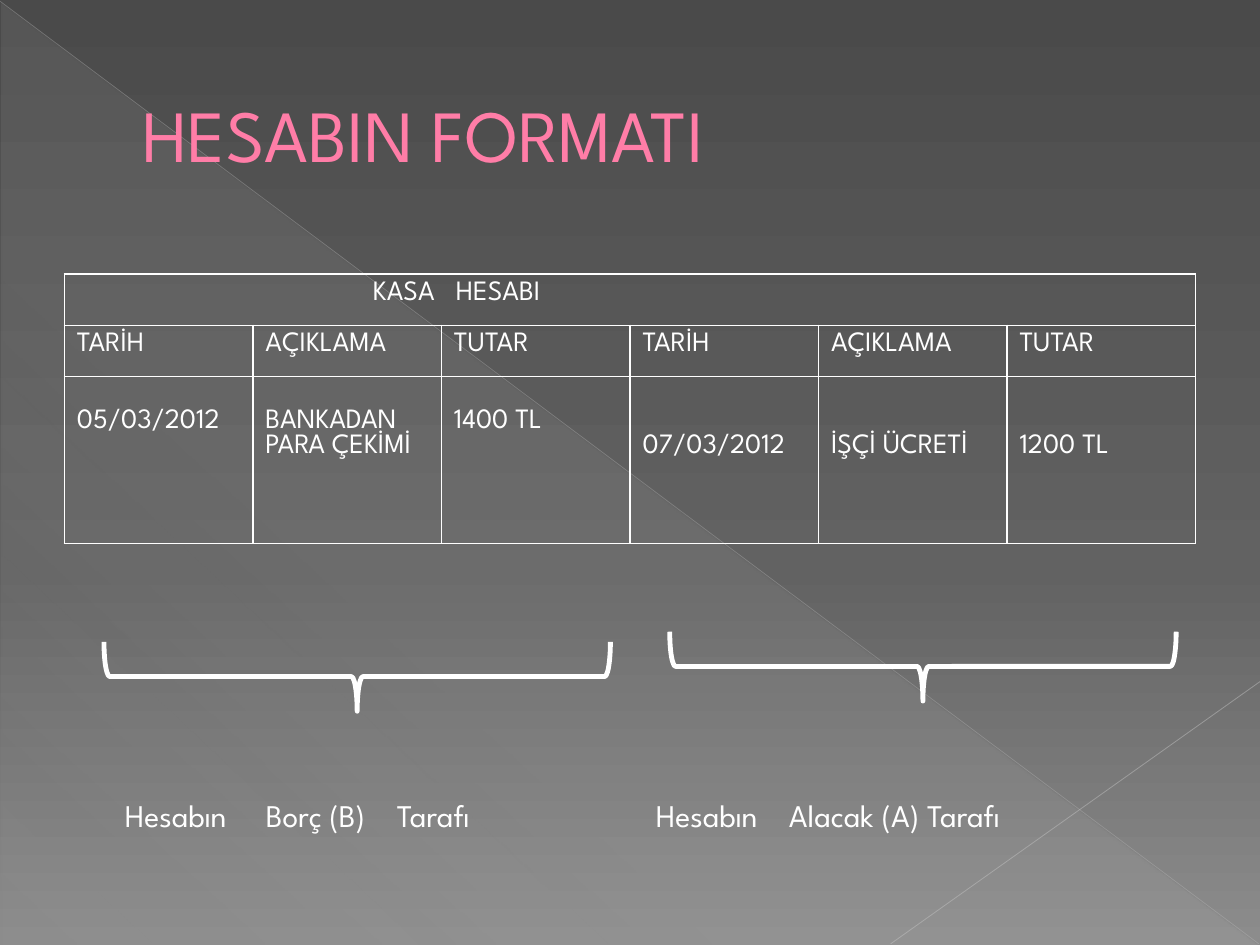
import pptx
import pptx.util
import pptx.dml.color
import pptx.enum.shapes
import pptx.enum.text
import pptx.oxml
import pptx.oxml.ns
from lxml import etree

Pt = pptx.util.Pt
qn = pptx.oxml.ns.qn
MSO = pptx.enum.shapes.MSO_SHAPE
FONT = "League Spartan"
COLORS = {"top": "4A4A4A", "mid": "626262", "bottom": "8C8C8C", "sheen": "D2D2D2",
          "diagonal": "BFBFBF", "corner": "C6C6C6", "title": "FF7DA7", "ink": "FFFFFF"}
HEADERS = ["TARİH", "AÇIKLAMA", "TUTAR"]
DEBIT = ["05/03/2012", "BANKADAN PARA ÇEKİMİ", "1400 TL"]
CREDIT = ["07/03/2012", "İŞÇİ ÜCRETİ", "1200 TL"]


def rgb(name):
    """Return the named colour."""
    return pptx.dml.color.RGBColor.from_string(COLORS[name])


def set_gradient(root, stops, angle):
    """Set (position, colour, opacity) stops and the angle of the gradient in root."""
    grad = root.find(".//" + qn("a:gradFill"))
    gs_list = grad.find(qn("a:gsLst"))
    for gs in list(gs_list):
        gs_list.remove(gs)
    for pos, name, opacity in stops:
        gs = etree.SubElement(gs_list, qn("a:gs"), pos=str(pos * 1000))
        clr = etree.SubElement(gs, qn("a:srgbClr"), val=COLORS[name])
        etree.SubElement(clr, qn("a:alpha"), val=str(opacity * 1000))
    grad.find(qn("a:lin")).set("ang", str(angle * 60000))


def set_text(tf, text, size, color, stops=()):
    """Write one paragraph with optional tab stops."""
    p = tf.paragraphs[0]
    p.text = text
    p.font.name, p.font.size = FONT, Pt(size)
    p.font.color.rgb = rgb(color)
    if stops:
        tabs = etree.Element(qn("a:tabLst"))
        for stop in stops:
            etree.SubElement(tabs, qn("a:tab"), pos=str(int(Pt(stop))), algn="l")
        p._p.get_or_add_pPr().insert(0, tabs)


def add_text(s, box, text, size, color, stops=()):
    """Add a vertically centred text box without side insets."""
    tf = s.shapes.add_textbox(*map(Pt, box)).text_frame
    tf.word_wrap = True
    tf.vertical_anchor = pptx.enum.text.MSO_ANCHOR.MIDDLE
    tf.margin_left = tf.margin_right = 0
    set_text(tf, text, size, color, stops)


def add_line(s, start, end, color, width, opacity):
    """Add a translucent straight line."""
    c = s.shapes.add_connector(pptx.enum.shapes.MSO_CONNECTOR.STRAIGHT,
                               *map(Pt, start + end))
    c.line.color.rgb = rgb(color)
    c.line.width = Pt(width)
    etree.SubElement(c._element.spPr.find(".//" + qn("a:srgbClr")),
                     qn("a:alpha"), val=str(opacity * 1000))
    etree.SubElement(c._element.spPr, qn("a:effectLst"))


def add_backdrop(s, width, height):
    """Draw the grey gradient, the sheen and the two thin lines."""
    s.background.fill.gradient()
    set_gradient(s._element, [(0, "top", 100), (60, "mid", 100), (100, "bottom", 100)], 90)
    sp = s.shapes.add_shape(MSO.RIGHT_TRIANGLE, Pt(0.7), Pt(1.4),
                            Pt(width - 1.4), Pt(height - 1.4))
    sp.shadow.inherit = False
    sp.line.fill.background()
    sp.fill.gradient()
    set_gradient(sp._element, [(0, "sheen", 10), (70, "sheen", 8), (100, "sheen", 1)], 133)
    add_line(s, (0, 0.7), (width - 0.7, height - 0.7), "diagonal", 0.39, 35)
    add_line(s, (width, 389.5), (509, height - 0.7), "corner", 0.47, 45)


def set_borders(cell, color, width):
    """Give a cell solid borders on all four sides."""
    tc_pr = cell._tc.get_or_add_tcPr()
    for i, tag in enumerate(("a:lnL", "a:lnR", "a:lnT", "a:lnB")):
        ln = etree.Element(qn(tag), w=str(int(Pt(width))))
        fill = etree.SubElement(ln, qn("a:solidFill"))
        etree.SubElement(fill, qn("a:srgbClr"), val=COLORS[color])
        tc_pr.insert(i, ln)


def add_account(s, left, top, width):
    """Add the cash account table with debit and credit halves."""
    heights, line = [29.3, 29.3, 95.2], 14.7
    rows = [["\tKASA\tHESABI"] + [""] * 5, HEADERS * 2, DEBIT + CREDIT]
    table = s.shapes.add_table(3, 6, Pt(left), Pt(top), Pt(width), Pt(sum(heights))).table
    table.first_row = table.horz_banding = False
    for col in table.columns:
        col.width = Pt(width / 6)
    for i, row in enumerate(rows):
        table.rows[i].height = Pt(heights[i])
        for j, text in enumerate(row):
            cell = table.cell(i, j)
            cell.fill.background()
            set_borders(cell, "ink", 1)
            set_text(cell.text_frame, text, 16, "ink", [169.1, 216.5] if i == 0 else ())
            if i == 2:
                cell.margin_top = Pt(3.6 + line * (1 if j < 3 else 2))
    table.cell(0, 0).merge(table.cell(0, 5))


def add_brace(s, left, top, width, height):
    """Add a brace that opens upward and fills the given box."""
    sp = s.shapes.add_shape(MSO.LEFT_BRACE, Pt(left + (width - height) / 2),
                            Pt(top + (height - width) / 2), Pt(height), Pt(width))
    sp.rotation = 270
    sp.shadow.inherit = False
    sp.fill.background()
    sp.line.color.rgb = rgb("ink")
    sp.line.width = Pt(2.75)


def main():
    """Build and save the slide."""
    prs = pptx.Presentation()
    prs.slide_width, prs.slide_height = Pt(720), Pt(540)
    s = prs.slides.add_slide(prs.slide_layouts[6])
    add_backdrop(s, 720, 540)
    add_text(s, (81.4, 20.9, 595, 110.2), "HESABIN FORMATI", 42, "title")
    add_account(s, 36.8, 156.7, 646.4)
    for left, top in ((59.4, 366.8), (382.7, 361)):
        add_brace(s, left, top, 289.4, 39.6)
    add_text(s, (71.4, 423.4, 611, 85),
             "Hesabın\tBorç (B)\tTarafı\tHesabın\tAlacak (A) Tarafı",
             18, "ink", [80.5, 155.4, 303.4, 379.4])
    prs.save("out.pptx")


if __name__ == "__main__":
    main()
